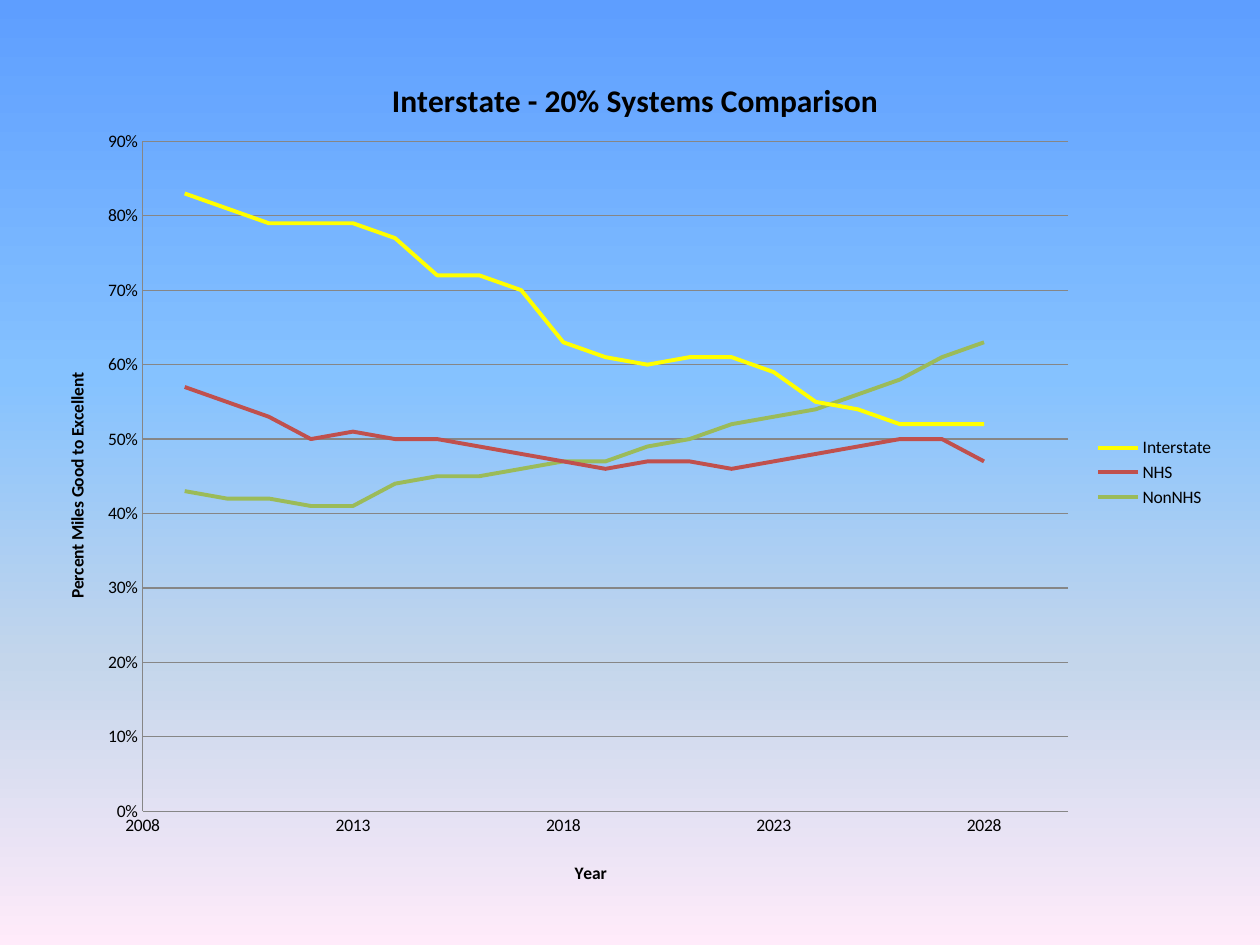
import pptx
import pptx.chart.data
import pptx.dml.color
import pptx.enum.chart
import pptx.oxml
import pptx.oxml.ns
import pptx.util
from pptx.util import Inches

FONT = "Calibri"
BLACK, GRAY = "000000", "868686"
BACKGROUND = [(0, "5E9EFF"), (40, "85C2FF"), (70, "C4D6EB"), (100, "FFEBFA")]
YEARS = range(2009, 2029)
# name, line colour, percent of miles for each year
SYSTEMS = [
    ("Interstate", "FFFF00", [83, 81, 79, 79, 79, 77, 72, 72, 70, 63,
                              61, 60, 61, 61, 59, 55, 54, 52, 52, 52]),
    ("NHS", "C0504D", [57, 55, 53, 50, 51, 50, 50, 49, 48, 47,
                       46, 47, 47, 46, 47, 48, 49, 50, 50, 47]),
    ("NonNHS", "9BBB59", [43, 42, 42, 41, 41, 44, 45, 45, 46, 47,
                          47, 49, 50, 52, 53, 54, 56, 58, 61, 63]),
]


def rgb(color):
    return pptx.dml.color.RGBColor.from_string(color)


def parse_element(tag, content=""):
    spaces = pptx.oxml.ns.nsdecls("a", "c")
    return pptx.oxml.parse_xml(f"<{tag} {spaces}>{content}</{tag}>")


def set_background(page, stops):
    fill = page.background.fill
    fill.gradient()
    fill.gradient_angle = 270
    stop_list = page.element.find(".//" + pptx.oxml.ns.qn("a:gsLst"))
    for stop in list(stop_list):
        stop_list.remove(stop)
    for percent, color in stops:
        stop = parse_element("a:gs", f'<a:srgbClr val="{color}"/>')
        stop.set("pos", str(percent * 1000))
        stop_list.append(stop)


def set_layout(element, index, content):
    """Place a chart part by fractions of the chart's size."""
    old = element.find(pptx.oxml.ns.qn("c:layout"))
    if old is not None:
        element.remove(old)
    content = "".join(f'<c:{tag} val="{value}"/>' for tag, value in content)
    element.insert(index, parse_element(
        "c:layout", f"<c:manualLayout>{content}</c:manualLayout>"))


def style_font(font, size, bold=False):
    font.name = FONT
    font.size = pptx.util.Pt(size)
    font.bold = bold
    font.color.rgb = rgb(BLACK)


def style_line(line, color, width):
    line.color.rgb = rgb(color)
    line.width = pptx.util.Pt(width)


def write_title(title, text, size, left, top):
    span = title.text_frame.paragraphs[0].add_run()
    span.text = text
    style_font(span.font, size, bold=True)
    set_layout(title.element, 1, [("xMode", "edge"), ("yMode", "edge"),
                                  ("x", left), ("y", top)])


def style_axis(axis, low, high, step, number_format):
    axis.minimum_scale, axis.maximum_scale = low, high
    axis.major_unit = step
    axis.major_tick_mark = pptx.enum.chart.XL_TICK_MARK.NONE
    axis.minor_tick_mark = pptx.enum.chart.XL_TICK_MARK.NONE
    axis.tick_labels.number_format = number_format
    axis.tick_labels.number_format_is_linked = False
    style_font(axis.tick_labels.font, 10)
    style_line(axis.format.line, GRAY, 0.75)


def clear_fills(chart):
    no_fill = "<a:noFill/><a:ln><a:noFill/></a:ln>"
    text_style = chart.element.find(pptx.oxml.ns.qn("c:txPr"))
    text_style.addprevious(parse_element("c:spPr", no_fill))
    plot_area = chart.element.find(".//" + pptx.oxml.ns.qn("c:plotArea"))
    plot_area.append(parse_element("c:spPr", no_fill))
    set_layout(plot_area, 0, [("layoutTarget", "inner"),
                              ("xMode", "edge"), ("yMode", "edge"),
                              ("x", 0.092), ("y", 0.117),
                              ("w", 0.775), ("h", 0.775)])


def add_comparison_chart(page):
    data = pptx.chart.data.XyChartData(number_format="0%")
    for name, _, percents in SYSTEMS:
        series = data.add_series(name)
        for year, percent in zip(YEARS, percents):
            series.add_data_point(year, percent / 100)
    chart = page.shapes.add_chart(
        pptx.enum.chart.XL_CHART_TYPE.XY_SCATTER_LINES_NO_MARKERS,
        Inches(0.26), Inches(0.32), Inches(9.48), Inches(6.86), data).chart
    style_font(chart.font, 10)
    clear_fills(chart)

    # Lines
    chart.plots[0].vary_by_categories = False
    for series, (_, color, _) in zip(chart.plots[0].series, SYSTEMS):
        series.smooth = False
        style_line(series.format.line, color, 2.25)

    # Axes
    years, shares = chart.category_axis, chart.value_axis
    style_axis(years, 2008, 2030, 5, "General")
    style_axis(shares, 0, 0.9, 0.1, "0%")
    years.has_major_gridlines = False
    shares.has_major_gridlines = True
    style_line(shares.major_gridlines.format.line, GRAY, 0.75)

    # Titles
    chart.has_title = True
    write_title(chart.chart_title, "Interstate - 20% Systems Comparison",
                18, 0.296, 0.038)
    write_title(years.axis_title, "Year", 10, 0.451, 0.947)
    write_title(shares.axis_title, "Percent Miles Good to Excellent",
                10, 0.025, 0.381)

    # Legend
    chart.has_legend = True
    chart.legend.position = pptx.enum.chart.XL_LEGEND_POSITION.RIGHT
    chart.legend.include_in_layout = False
    style_font(chart.legend.font, 10)


def main():
    deck = pptx.Presentation()
    deck.slide_width, deck.slide_height = Inches(10), Inches(7.5)
    page = deck.slides.add_slide(deck.slide_layouts[6])
    set_background(page, BACKGROUND)
    add_comparison_chart(page)
    deck.save("out.pptx")


if __name__ == "__main__":
    main()
